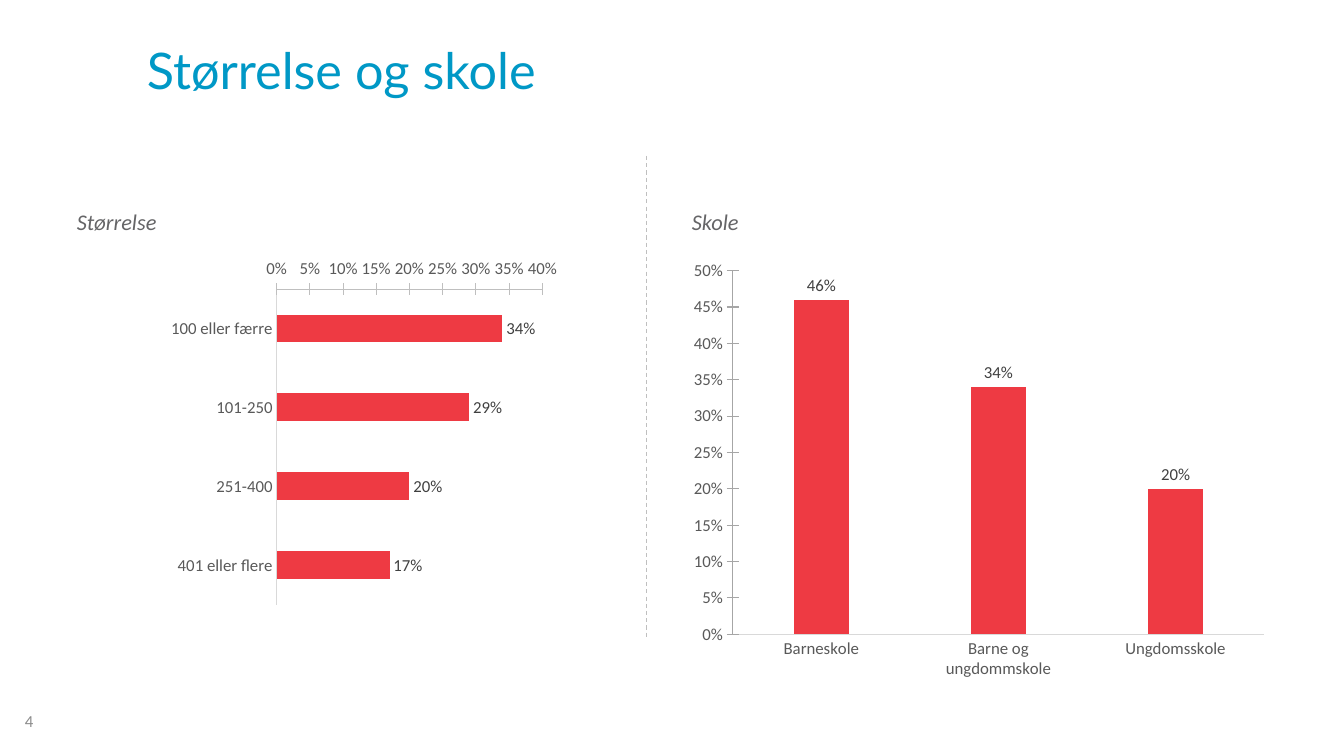
"""Build the slide comparing school size and school type."""
from dataclasses import dataclass

from lxml import etree
from pptx import Presentation
from pptx.chart.data import CategoryChartData
from pptx.dml.color import RGBColor
from pptx.enum.chart import XL_CHART_TYPE as Chart, XL_LABEL_POSITION as LabelPos, XL_TICK_MARK as Tick
from pptx.enum.dml import MSO_LINE as Dash
from pptx.enum.shapes import MSO_CONNECTOR as Conn
from pptx.enum.text import MSO_ANCHOR as Anchor
from pptx.oxml.ns import qn
from pptx.util import Emu, Pt

SCALE = 914400 / 100.8
COLORS = {
    "title": "0098C6", "heading": "656567", "number": "8C8C8C", "bar": "EE3A43",
    "axis_text": "595959", "label": "404040", "text": "000000",
    "cat_line": "D9D9D9", "light_line": "BFBFBF", "dark_line": "A6A6A6",
}


@dataclass
class Label:
    text: str
    box: tuple[int, int, int, int]
    size: int
    color: str
    font: str = "Calibri"
    italic: bool = False
    anchor: Anchor = Anchor.MIDDLE


@dataclass
class BarChart:
    kind: Chart
    box: tuple[int, int, int, int]
    values: dict[str, float]
    top: float
    gap: int
    overlap: int
    axis_line: str
    reverse: bool = False


LABELS = [
    Label("Størrelse og skole", (137, 6, 1139, 126), 36, "title", "Lato"),
    *(Label(text, (left, 169, 594, 71), 16, "heading", italic=True, anchor=Anchor.BOTTOM)
      for text, left in (("Størrelse", 67), ("Skole", 682))),
    Label("4", (15, 701, 313, 40), 12, "number"),
]
CHARTS = [
    BarChart(Chart.BAR_CLUSTERED, (163, 252, 402, 360),
             {"100 eller færre": 0.34, "101-250": 0.29, "251-400": 0.2, "401 eller flere": 0.17},
             0.4, 182, 0, "light_line", reverse=True),
    BarChart(Chart.COLUMN_CLUSTERED, (682, 252, 594, 435),
             {"Barneskole": 0.46, "Barne og ungdommskole": 0.34, "Ungdomsskole": 0.2},
             0.5, 219, -27, "dark_line"),
]


def px(n: int) -> Emu:
    return Emu(round(n * SCALE))


def rgb(name: str) -> RGBColor:
    return RGBColor.from_string(COLORS[name])


def style_font(font, size: int, color: str, name: str = "Calibri") -> None:
    font.size, font.name = Pt(size), name
    font.color.rgb = rgb(color)


def style_line(line, color: str) -> None:
    line.color.rgb = rgb(color)
    line.width = Pt(0.75)


def draw_label(s, label: Label) -> None:
    tf = s.shapes.add_textbox(*map(px, label.box)).text_frame
    tf.word_wrap = True
    tf.vertical_anchor = label.anchor
    tf.text = label.text
    r = tf.paragraphs[0].runs[0]
    style_font(r.font, label.size, label.color, label.font)
    r.font.italic = label.italic


def draw_chart(s, item: BarChart) -> None:
    data = CategoryChartData(number_format="0%")
    data.categories = list(item.values)
    data.add_series("Series 1", list(item.values.values()))
    chart = s.shapes.add_chart(item.kind, *map(px, item.box), data).chart
    chart.has_legend = chart.has_title = False
    style_font(chart.font, 10, "text")

    cat, val = chart.category_axis, chart.value_axis
    for axis, line, tick in ((cat, "cat_line", Tick.NONE), (val, item.axis_line, Tick.CROSS)):
        axis.has_major_gridlines = False
        axis.major_tick_mark, axis.minor_tick_mark = tick, Tick.NONE
        style_font(axis.tick_labels.font, 12, "axis_text")
        style_line(axis.format.line, line)
    cat.reverse_order = item.reverse
    val.minimum_scale, val.maximum_scale, val.major_unit = 0, item.top, 0.05
    val.tick_labels.number_format = "0%"
    val.tick_labels.number_format_is_linked = False

    plot = chart.plots[0]
    plot.gap_width, plot.overlap = item.gap, item.overlap
    plot.vary_by_categories = False
    series = plot.series[0]
    series.invert_if_negative = False
    series.format.fill.solid()
    series.format.fill.fore_color.rgb = rgb("bar")
    labels = series.data_labels
    labels.show_value = True
    labels.position = LabelPos.OUTSIDE_END
    labels.number_format = "0%"
    labels.number_format_is_linked = False
    style_font(labels.font, 12, "label")


def draw_divider(s) -> None:
    divider = s.shapes.add_connector(Conn.STRAIGHT, px(647), px(156), px(647), px(637))
    style_line(divider.line, "light_line")
    divider.line.dash_style = Dash.DASH
    etree.SubElement(divider._element.spPr, qn("a:effectLst"))


def main() -> None:
    prs = Presentation()
    prs.slide_width, prs.slide_height = px(1344), px(756)
    s = prs.slides.add_slide(prs.slide_layouts[6])
    for label in LABELS:
        draw_label(s, label)
    for item in CHARTS:
        draw_chart(s, item)
    draw_divider(s)
    prs.save("out.pptx")


if __name__ == "__main__":
    main()
